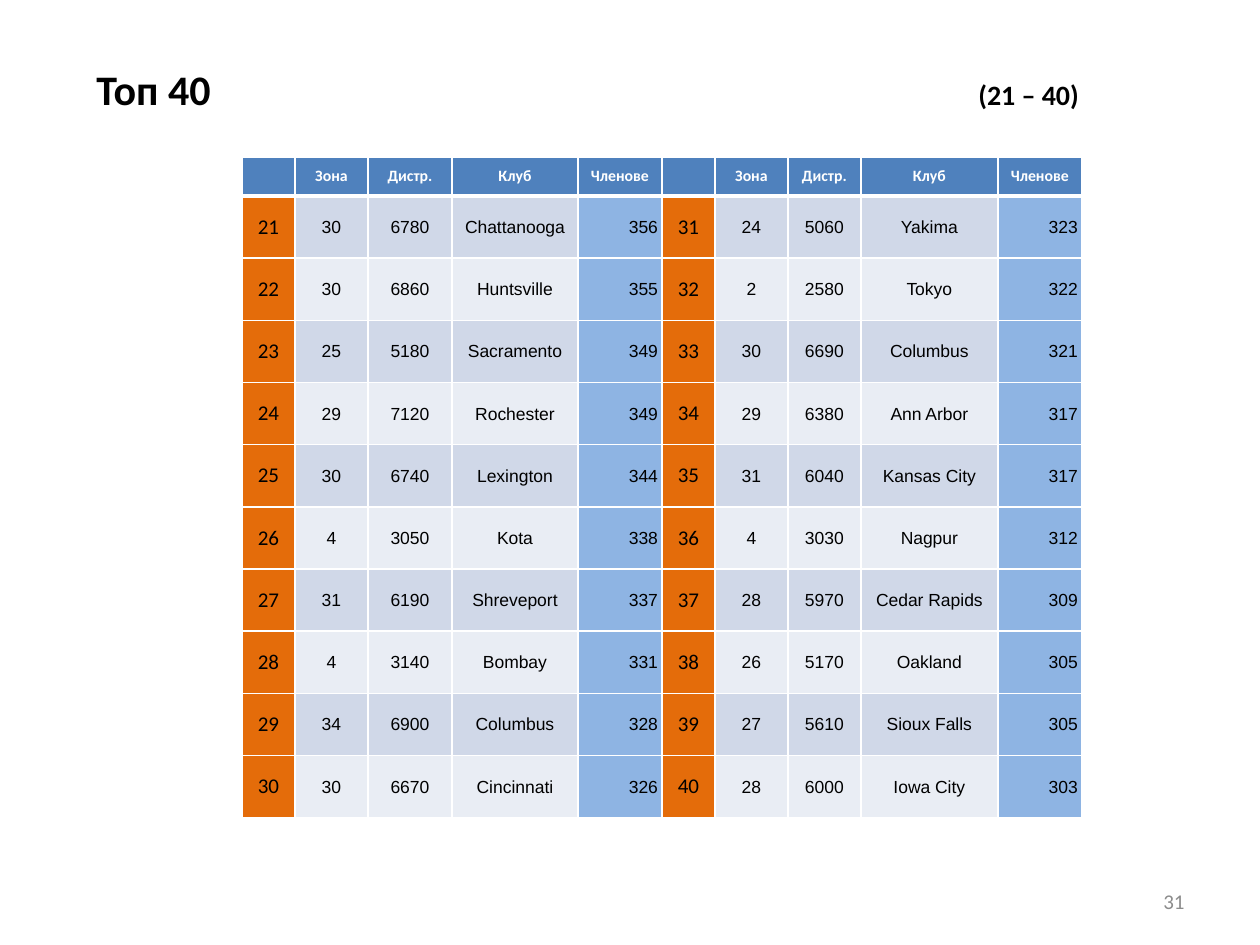
from lxml import etree
from pptx import Presentation
from pptx.dml.color import RGBColor
from pptx.enum.text import MSO_ANCHOR, PP_ALIGN
from pptx.oxml.ns import qn
from pptx.util import Emu, Pt

MID = MSO_ANCHOR.MIDDLE
LEFT, CENTER, RIGHT = PP_ALIGN.LEFT, PP_ALIGN.CENTER, PP_ALIGN.RIGHT

BLACK = RGBColor(0, 0, 0)
WHITE = RGBColor(255, 255, 255)
GRAY = RGBColor(0x8C, 0x8C, 0x8C)
BLUE = RGBColor(0x4F, 0x81, 0xBD)
SKY = RGBColor(0x8E, 0xB4, 0xE3)
ORANGE = RGBColor(0xE4, 0x6C, 0x0A)
BANDS = RGBColor(0xD0, 0xD8, 0xE8), RGBColor(0xE9, 0xED, 0xF4)

HEAD = ["", "Зона", "Дистр.", "Клуб", "Членове"]
FIRST = 21
CLUBS = [
    (30, 6780, "Chattanooga", 356), (30, 6860, "Huntsville", 355),
    (25, 5180, "Sacramento", 349), (29, 7120, "Rochester", 349),
    (30, 6740, "Lexington", 344), (4, 3050, "Kota", 338),
    (31, 6190, "Shreveport", 337), (4, 3140, "Bombay", 331),
    (34, 6900, "Columbus", 328), (30, 6670, "Cincinnati", 326),
    (24, 5060, "Yakima", 323), (2, 2580, "Tokyo", 322),
    (30, 6690, "Columbus", 321), (29, 6380, "Ann Arbor", 317),
    (31, 6040, "Kansas City", 317), (4, 3030, "Nagpur", 312),
    (28, 5970, "Cedar Rapids", 309), (26, 5170, "Oakland", 305),
    (27, 5610, "Sioux Falls", 305), (28, 6000, "Iowa City", 303),
]
WIDTHS = [53, 73, 84, 126, 84, 53, 73, 73, 137, 84]
HEAD_H = 39


def px(n):
    return Emu(round(n * 914400 / 126))


def style(run, size, color=BLACK, bold=False, face="Calibri"):
    font = run.font
    font.size, font.bold, font.name = Pt(size), bold, face
    font.color.rgb = color


def add_text(slide, box, align):
    """Add an empty one-line text box and return its paragraph."""
    frame = slide.shapes.add_textbox(*map(px, box)).text_frame
    frame.word_wrap = True
    frame.vertical_anchor = MID
    para = frame.paragraphs[0]
    para.alignment = align
    return para


def add_title(slide, box):
    para = add_text(slide, box, LEFT)
    tabs = etree.SubElement(para._p.get_or_add_pPr(), qn("a:tabLst"))
    etree.SubElement(tabs, qn("a:tab"), pos=str(px(882)), algn="l")
    for text, size in (("Топ 40\t", 24), ("(21 – 40)", 16)):
        run = para.add_run()
        run.text = text
        style(run, size, bold=True)


def add_number(slide, box):
    para = add_text(slide, box, RIGHT)
    para.text = "31"
    style(para.runs[0], 12, GRAY)


def set_edges(cell, top, bottom):
    """Draw white cell borders; top and bottom widths are in points."""
    props = cell._tc.get_or_add_tcPr()
    sides = ("L", 1), ("R", 1), ("T", top), ("B", bottom)
    for i, (side, width) in enumerate(sides):
        line = etree.Element(qn("a:ln" + side), w=str(Pt(width)))
        fill = etree.SubElement(line, qn("a:solidFill"))
        etree.SubElement(fill, qn("a:srgbClr"), val=str(WHITE))
        props.insert(i, line)


def fill_cell(cell, value, row, kind):
    """Fill one cell; kind is its column within its half of the table."""
    cell.text = str(value)
    cell.vertical_anchor = MID
    para = cell.text_frame.paragraphs[0]
    para.alignment = CENTER
    look = {"size": 10, "face": "Arial"}
    if row == 0:
        fill, look = BLUE, {"size": 9, "color": WHITE, "bold": True}
    elif kind == 0:
        fill, look = ORANGE, {"size": 12}
    else:
        last = kind == len(HEAD) - 1
        fill = SKY if last else BANDS[(row - 1) % 2]
        cell.margin_left = px(48 if last else 1)
        cell.margin_right = cell.margin_top = px(1)
        cell.margin_bottom = 0
    cell.fill.solid()
    cell.fill.fore_color.rgb = fill
    set_edges(cell, 3 if row == 1 else 1, 3 if row == 0 else 1)
    for run in para.runs:
        style(run, **look)
    if not para.runs:
        etree.SubElement(para._p, qn("a:endParaRPr"), sz="900")


def add_clubs(slide, box):
    half = len(CLUBS) // 2
    ranked = [(FIRST + i, *club) for i, club in enumerate(CLUBS)]
    rows = [HEAD * 2] + [a + b for a, b in zip(ranked[:half], ranked[half:])]
    frame = slide.shapes.add_table(len(rows), len(WIDTHS), *map(px, box))
    table = frame.table
    for col, width in zip(table.columns, WIDTHS):
        col.width = px(width)
    body = (box[3] - HEAD_H) / half
    for r, values in enumerate(rows):
        table.rows[r].height = px(body if r else HEAD_H)
        for c, value in enumerate(values):
            fill_cell(table.cell(r, c), value, r, c % len(HEAD))


def main():
    deck = Presentation()
    deck.slide_width, deck.slide_height = px(1260), px(945)
    slide = deck.slides.add_slide(deck.slide_layouts[6])
    add_title(slide, (84, 42, 1124, 94))
    add_number(slide, (903, 876, 294, 50))
    add_clubs(slide, (242, 157, 840, 661))
    deck.save("out.pptx")


if __name__ == "__main__":
    main()
